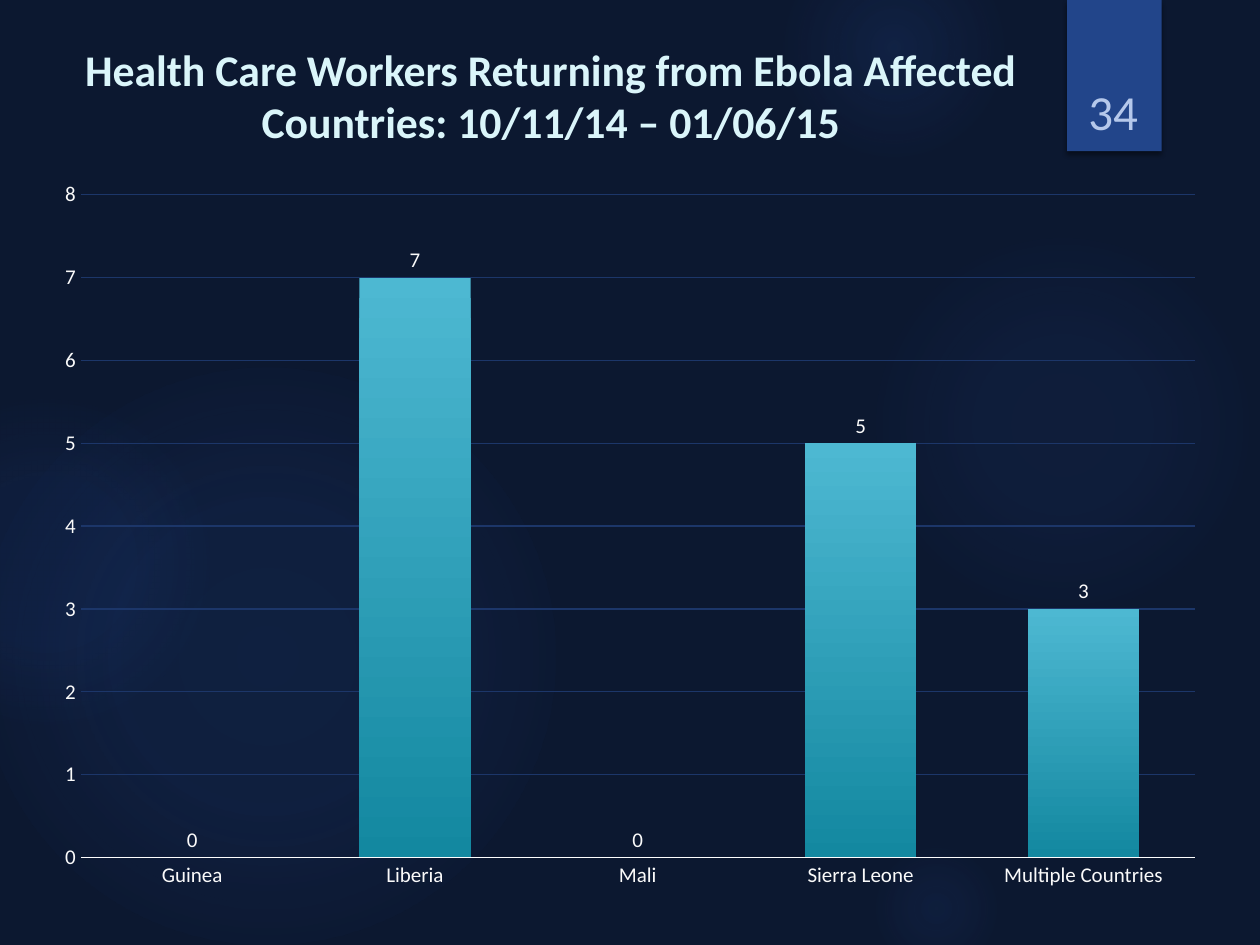
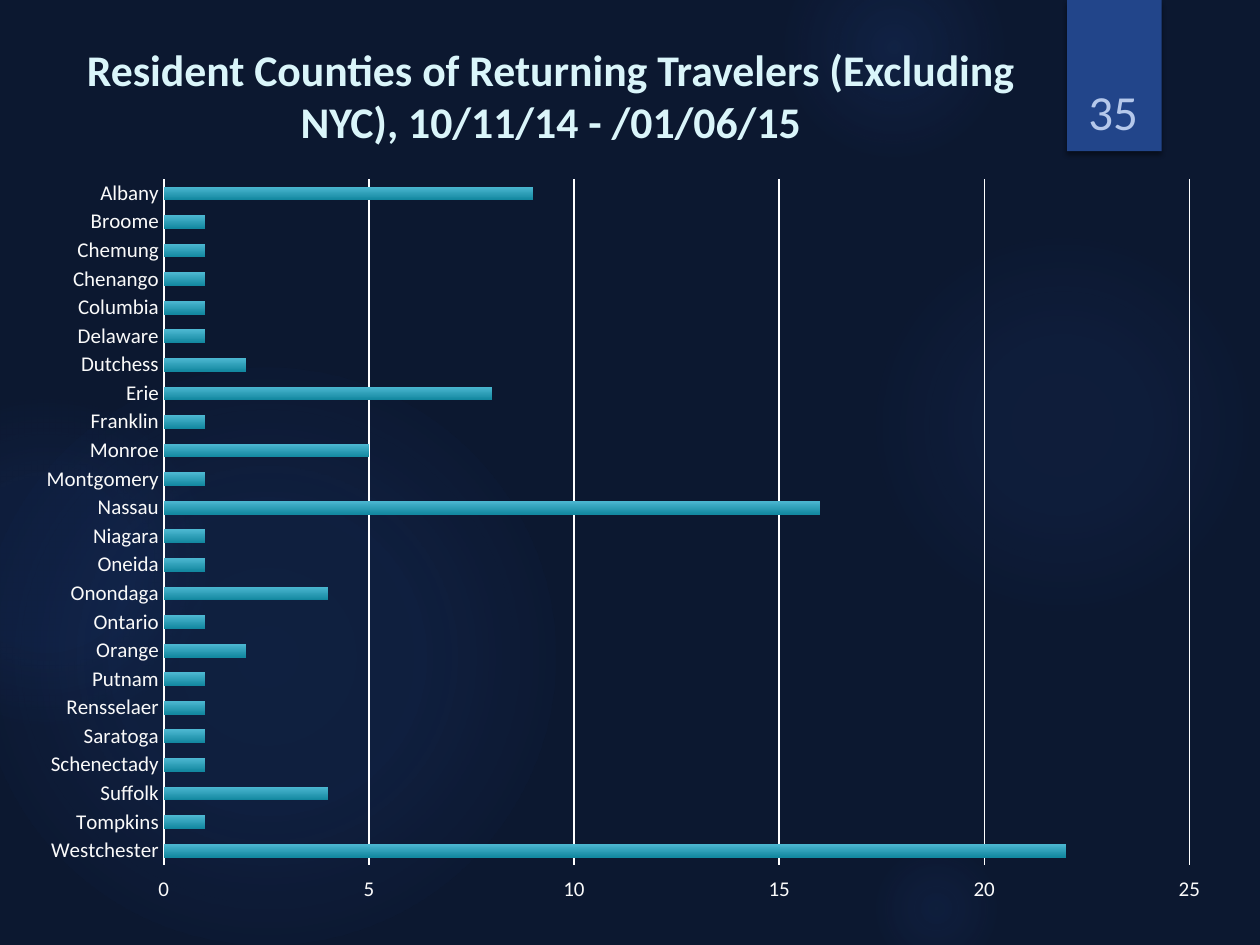
from lxml import etree
from pptx import Presentation
from pptx.chart.data import CategoryChartData
from pptx.dml.color import RGBColor
from pptx.enum.chart import (XL_CHART_TYPE, XL_LABEL_POSITION,
                             XL_TICK_LABEL_POSITION, XL_TICK_MARK)
from pptx.enum.shapes import MSO_SHAPE
from pptx.enum.text import MSO_ANCHOR, PP_ALIGN
from pptx.oxml import parse_xml
from pptx.oxml.ns import nsdecls, qn
from pptx.util import Inches, Pt

FONT = "Calibri"
NAVY = RGBColor(0x0C, 0x18, 0x30)
GLOW_BLUE = RGBColor(0x30, 0x60, 0xC0)
TAB_BLUE = RGBColor(0x22, 0x45, 0x8A)
NUMBER_BLUE = RGBColor(0xB5, 0xC8, 0xEB)
TITLE_ICE = RGBColor(0xDA, 0xF5, 0xFA)
LABEL_WHITE = RGBColor(0xFA, 0xFA, 0xFA)
CHART_WHITE = RGBColor(0xF8, 0xF8, 0xF8)
LINE_WHITE = RGBColor(0xFE, 0xFE, 0xFE)
GRID_BLUE = RGBColor(0x1C, 0x36, 0x69)
BAR_TOP = RGBColor(0x4D, 0xB8, 0xD2)
BAR_BOTTOM = RGBColor(0x13, 0x88, 0xA0)

# Left, top, diameter, then (position, opacity) stops in percent
GLOWS = [
    (6.89, 1.83, 3.08, [(0, 7), (36, 6), (69, 0)]),
    (6.22, -0.5, 1.75, [(0, 14), (36, 7), (73, 0)]),
    (6.89, 6.67, 1.08, [(0, 9), (36, 5), (66, 0)]),
    (-0.17, 2.92, 4.58, [(0, 11), (36, 10), (75, 0)]),
    (-0.92, 3.17, 2.58, [(0, 8), (36, 8), (72, 0)]),
]
TAB_BOX = (8.47, 0, 0.75, 1.2)
NUMBER_BOX = (8.49, 0.32, 0.69, 0.84)
TITLE_BOX = (0.41, 0.29, 7.92, 0.92)
CHART_BOX = (0.33, 1.33, 9.34, 5.83)

SLIDES = [
    {
        "number": 34,
        "title": "Health Care Workers Returning from Ebola Affected "
                 "Countries: 10/11/14 – 01/06/15",
        "type": XL_CHART_TYPE.COLUMN_CLUSTERED,
        "values": {"Guinea": 0, "Liberia": 7, "Mali": 0, "Sierra Leone": 5,
                   "Multiple Countries": 3},
        "gap": 100, "overlap": -24, "maximum": 8, "step": 1,
        "grid": GRID_BLUE, "labels": True, "top_down": False, "plot_box": None,
    },
    {
        "number": 35,
        "title": "Resident Counties of Returning Travelers (Excluding NYC), "
                 "10/11/14 - /01/06/15",
        "type": XL_CHART_TYPE.BAR_CLUSTERED,
        "values": {"Albany": 9, "Broome": 1, "Chemung": 1, "Chenango": 1,
                   "Columbia": 1, "Delaware": 1, "Dutchess": 2, "Erie": 8,
                   "Franklin": 1, "Monroe": 5, "Montgomery": 1, "Nassau": 16,
                   "Niagara": 1, "Oneida": 1, "Onondaga": 4, "Ontario": 1,
                   "Orange": 2, "Putnam": 1, "Rensselaer": 1, "Saratoga": 1,
                   "Schenectady": 1, "Suffolk": 4, "Tompkins": 1,
                   "Westchester": 22},
        "gap": 115, "overlap": -20, "maximum": 25, "step": 5,
        "grid": LINE_WHITE, "labels": False, "top_down": True,
        "plot_box": (1.3, 1.42, 8.14, 5.45),
    },
]


def inches(box):
    return [Inches(length) for length in box]


def set_font(font, size, color, bold=False):
    font.name, font.size, font.bold = FONT, Pt(size), bold
    font.color.rgb = color


def set_gradient(fill, properties, stops, direction):
    """Fill with (position, colour, opacity) stops, all in percent."""
    fill.background()
    stop_xml = "".join(
        f'<a:gs pos="{position * 1000}"><a:srgbClr val="{color}">'
        f'<a:alpha val="{opacity * 1000}"/></a:srgbClr></a:gs>'
        for position, color, opacity in stops)
    gradient = parse_xml(f'<a:gradFill {nsdecls("a")} rotWithShape="1">'
                         f'<a:gsLst>{stop_xml}</a:gsLst>{direction}</a:gradFill>')
    properties.replace(properties.find(qn("a:noFill")), gradient)


def add_plain_shape(slide, preset, box):
    shape = slide.shapes.add_shape(preset, *inches(box))
    shape.shadow.inherit = False
    shape.line.fill.background()
    return shape


def add_backdrop(slide):
    slide.background.fill.solid()
    slide.background.fill.fore_color.rgb = NAVY
    center = ('<a:path path="circle"><a:fillToRect l="50000" t="50000" '
              'r="50000" b="50000"/></a:path>')
    for left, top, diameter, stops in GLOWS:
        glow = add_plain_shape(slide, MSO_SHAPE.OVAL,
                               (left, top, diameter, diameter))
        set_gradient(glow.fill, glow._element.spPr,
                     [(position, GLOW_BLUE, opacity) for position, opacity in stops],
                     center)

    tab = add_plain_shape(slide, MSO_SHAPE.RECTANGLE, TAB_BOX)
    tab.fill.solid()
    tab.fill.fore_color.rgb = TAB_BLUE
    tab._element.spPr.find(qn("a:effectLst")).append(parse_xml(
        f'<a:outerShdw {nsdecls("a")} blurRad="{Pt(3)}" dist="{Pt(2)}" '
        'dir="5400000" algn="t" rotWithShape="0"><a:srgbClr val="000000">'
        '<a:alpha val="45000"/></a:srgbClr></a:outerShdw>'))


def add_text(slide, box, text, size, color, bold=False, anchor=MSO_ANCHOR.TOP):
    frame = slide.shapes.add_textbox(*inches(box)).text_frame
    frame.word_wrap = True
    frame.vertical_anchor = anchor
    paragraph = frame.paragraphs[0]
    paragraph.alignment = PP_ALIGN.CENTER
    run = paragraph.add_run()
    run.text = text
    set_font(run.font, size, color, bold)


def set_plot_area(chart, plot_box):
    """Fix the inner plot area, given in inches on the slide."""
    left, top, width, height = plot_box
    chart_left, chart_top, chart_width, chart_height = CHART_BOX
    settings = {
        "layoutTarget": "inner", "xMode": "edge", "yMode": "edge",
        "x": (left - chart_left) / chart_width,
        "y": (top - chart_top) / chart_height,
        "w": width / chart_width, "h": height / chart_height,
    }
    area = chart._chartSpace.chart.plotArea
    for layout in area.findall(qn("c:layout")):
        area.remove(layout)
    layout = etree.Element(qn("c:layout"))
    manual = etree.SubElement(layout, qn("c:manualLayout"))
    for name, value in settings.items():
        etree.SubElement(manual, qn(f"c:{name}")).set("val", str(value))
    area.insert(0, layout)


def style_axes(chart, content):
    for axis in (chart.category_axis, chart.value_axis):
        axis.major_tick_mark = axis.minor_tick_mark = XL_TICK_MARK.NONE
        set_font(axis.tick_labels.font, 12, LABEL_WHITE)

    categories, values = chart.category_axis, chart.value_axis
    categories.has_major_gridlines = False
    categories.format.line.color.rgb = LINE_WHITE
    categories.format.line.width = Pt(1)
    if content["top_down"]:
        categories.reverse_order = True
        values.tick_label_position = XL_TICK_LABEL_POSITION.HIGH

    values.minimum_scale, values.maximum_scale = 0, content["maximum"]
    values.major_unit = content["step"]
    values.format.line.fill.background()
    values.has_major_gridlines = True
    values.major_gridlines.format.line.color.rgb = content["grid"]
    values.major_gridlines.format.line.width = Pt(0.75)


def add_bars(slide, content):
    data = CategoryChartData()
    data.categories = list(content["values"])
    data.add_series("Series 1", list(content["values"].values()))
    chart = slide.shapes.add_chart(content["type"], *inches(CHART_BOX), data).chart
    chart.has_legend = chart.has_title = False
    set_font(chart.font, 10, CHART_WHITE)
    style_axes(chart, content)

    plot = chart.plots[0]
    plot.vary_by_categories = False
    plot.gap_width, plot.overlap = content["gap"], content["overlap"]
    series = plot.series[0]
    series.invert_if_negative = False
    set_gradient(series.format.fill, series._element.get_or_add_spPr(),
                 [(0, BAR_TOP, 100), (100, BAR_BOTTOM, 100)],
                 '<a:lin ang="5400000" scaled="0"/>')
    if content["labels"]:
        labels = series.data_labels
        labels.show_value = True
        labels.position = XL_LABEL_POSITION.OUTSIDE_END
        set_font(labels.font, 12, LABEL_WHITE)
    if content["plot_box"]:
        set_plot_area(chart, content["plot_box"])


def main():
    presentation = Presentation()
    presentation.slide_width, presentation.slide_height = Inches(10), Inches(7.5)
    blank = presentation.slide_layouts[6]
    for content in SLIDES:
        slide = presentation.slides.add_slide(blank)
        add_backdrop(slide)
        add_bars(slide, content)
        add_text(slide, NUMBER_BOX, str(content["number"]), 28, NUMBER_BLUE,
                 anchor=MSO_ANCHOR.BOTTOM)
        add_text(slide, TITLE_BOX, content["title"], 25, TITLE_ICE, bold=True)
    presentation.save("out.pptx")


if __name__ == "__main__":
    main()
